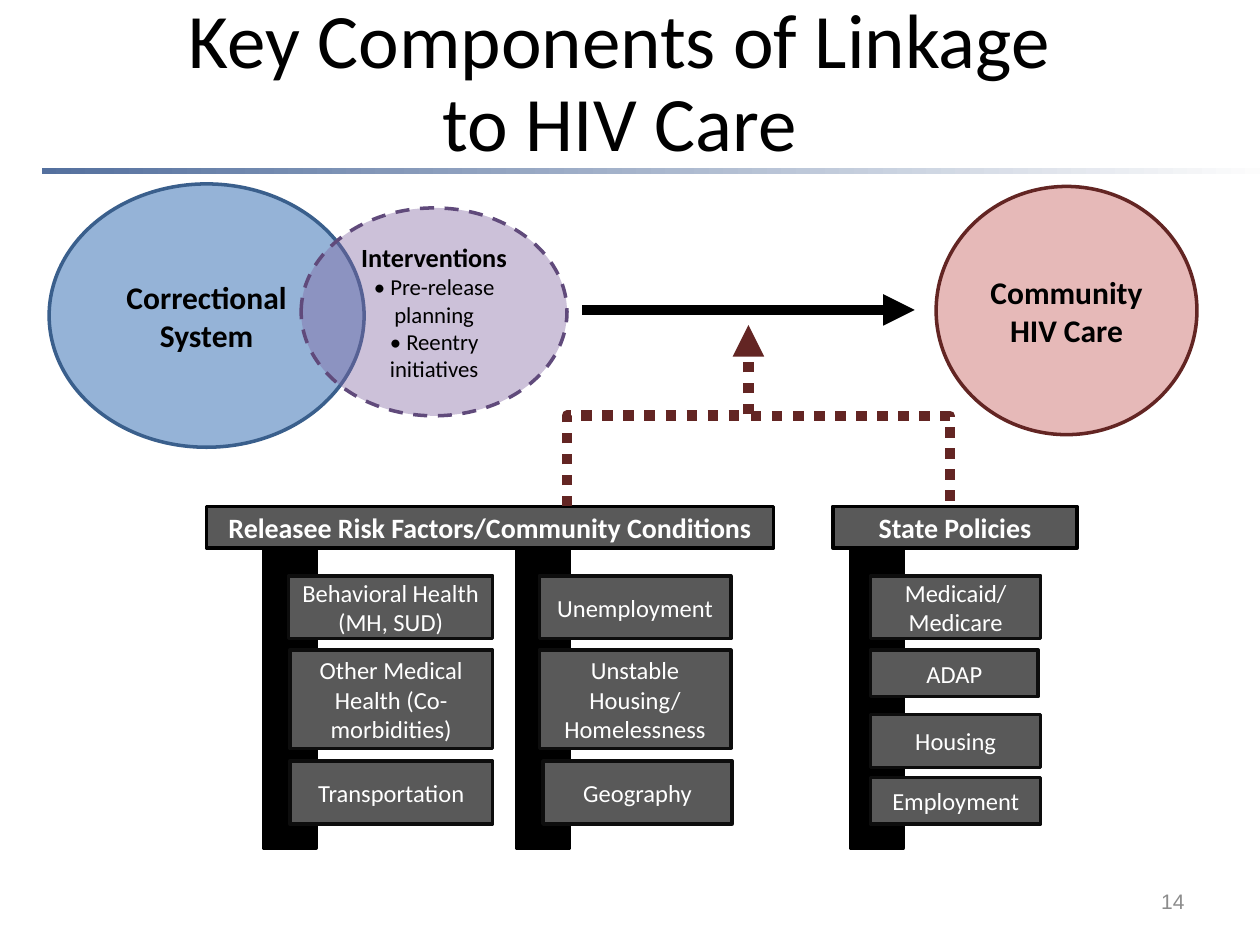
from lxml import etree
from pptx import Presentation
from pptx.dml.color import RGBColor
from pptx.enum.dml import MSO_LINE
from pptx.enum.shapes import MSO_CONNECTOR, MSO_SHAPE
from pptx.enum.text import MSO_ANCHOR, PP_ALIGN
from pptx.oxml.ns import qn
from pptx.util import Inches, Pt

RECT, OVAL = MSO_SHAPE.RECTANGLE, MSO_SHAPE.OVAL
STRAIGHT, ELBOW = MSO_CONNECTOR.STRAIGHT, MSO_CONNECTOR.ELBOW
DASH, DOTS = MSO_LINE.DASH, MSO_LINE.ROUND_DOT
MIDDLE = MSO_ANCHOR.MIDDLE
CENTER, RIGHT = PP_ALIGN.CENTER, PP_ALIGN.RIGHT

COLORS = {
    "black": "000000", "white": "FFFFFF", "gray": "595959", "edge": "0D0D0D",
    "number": "8C8C8C", "rule_start": "54709E", "rule_end": "FCFCFC",
    "blue": "95B3D7", "blue_line": "3A5F8C",
    "purple": "8064A2", "purple_line": "604A7B",
    "pink": "E6B9B8", "maroon": "632523",
}

BAR_TOP, BAR_WIDTH, BAR_HEIGHT = 4.33, 0.42, 2.4
HEADER_TOP, HEADER_HEIGHT = 4.02, 0.33
BARS = [6.75, 4.1, 2.09]
HEADERS = [
    (6.61, 1.94, "State Policies"),
    (1.64, 4.5, "Releasee Risk Factors/Community Conditions"),
]
FACTORS = [
    (6.91, 4.57, 1.35, 0.5, "Medicaid/\nMedicare"),
    (6.91, 5.16, 1.33, 0.37, "ADAP"),
    (6.91, 5.67, 1.35, 0.42, "Housing"),
    (6.91, 6.17, 1.35, 0.37, "Employment"),
    (2.29, 4.57, 1.62, 0.5, "Behavioral Health (MH, SUD)"),
    (2.3, 5.16, 1.61, 0.78, "Other Medical Health (Co-morbidities)"),
    (2.3, 6.04, 1.61, 0.5, "Transportation"),
    (4.28, 4.57, 1.52, 0.5, "Unemployment"),
    (4.28, 5.16, 1.52, 0.78, "Unstable Housing/\nHomelessness"),
    (4.31, 6.04, 1.5, 0.5, "Geography"),
]


def rgb(name):
    return RGBColor.from_string(COLORS[name])


def write(sp, text, size, color="black", bold=False, align=CENTER, font="Calibri"):
    tf = sp.text_frame
    tf.word_wrap = True
    tf.vertical_anchor = MIDDLE
    tf.text = text
    for p in tf.paragraphs:
        p.alignment = align
        for r in p.runs:
            r.font.size = Pt(size)
            r.font.name = font
            r.font.bold = bold
            r.font.color.rgb = rgb(color)


def add_box(slide, kind, at, fill, line):
    sp = slide.shapes.add_shape(kind, *map(Inches, at))
    sp.shadow.inherit = False
    sp.fill.solid()
    sp.fill.fore_color.rgb = rgb(fill)
    sp.line.color.rgb = rgb(line)
    sp.line.width = Pt(2)
    return sp


def add_line(slide, kind, start, end, color, dash=None, arrow=False):
    cx = slide.shapes.add_connector(kind, *map(Inches, start + end))
    cx.line.color.rgb = rgb(color)
    cx.line.width = Pt(6)
    if dash:
        cx.line.dash_style = dash
    props = cx._element.spPr
    if arrow:
        etree.SubElement(props.find(qn("a:ln")), qn("a:tailEnd"), type="triangle")
    etree.SubElement(props, qn("a:effectLst"))
    return cx


def add_title(slide):
    title = slide.shapes.title
    title.left, title.top, title.width, title.height = map(Inches, (0.42, 0.05, 9, 1.25))
    write(title, "Key Components of Linkage\vto HIV Care", 44)
    title.text_frame.paragraphs[0].line_spacing = 0.9


def add_rule(slide):
    sp = slide.shapes.add_shape(RECT, *map(Inches, (0.33, 1.33, 9.67, 0.05)))
    sp.shadow.inherit = False
    sp.line.fill.background()
    sp.fill.gradient()
    sp.fill.gradient_angle = 0
    for stop, name in zip(sp.fill.gradient_stops, ("rule_start", "rule_end")):
        stop.color.rgb = rgb(name)


def add_interventions(slide):
    sp = add_box(slide, OVAL, (2.39, 1.65, 2.11, 1.65), "purple", "purple_line")
    sp.line.dash_style = DASH
    color = sp._element.spPr.find(qn("a:solidFill")).find(qn("a:srgbClr"))
    etree.SubElement(color, qn("a:alpha"), val="40000")
    write(sp, "Interventions\n• Pre-release planning\n• Reentry initiatives", 13)
    heading = sp.text_frame.paragraphs[0].runs[0]
    heading.font.size = Pt(15)
    heading.font.bold = True


def add_systems(slide):
    sp = add_box(slide, OVAL, (0.39, 1.46, 2.5, 2.09), "blue", "blue_line")
    write(sp, "Correctional System", 18, bold=True)
    add_interventions(slide)
    sp = add_box(slide, OVAL, (7.43, 1.48, 2.07, 1.97), "pink", "maroon")
    write(sp, "Community HIV Care", 18, bold=True)


def add_factors(slide):
    for left in BARS:
        add_box(slide, RECT, (left, BAR_TOP, BAR_WIDTH, BAR_HEIGHT), "black", "black")
    for left, width, text in HEADERS:
        sp = add_box(slide, RECT, (left, HEADER_TOP, width, HEADER_HEIGHT), "gray", "black")
        write(sp, text, 16, "white", bold=True)
    for *at, text in FACTORS:
        write(add_box(slide, RECT, at, "gray", "edge"), text, 14, "white")


def add_arrows(slide):
    add_line(slide, STRAIGHT, (4.62, 2.46), (7.26, 2.46), "black", arrow=True)
    riser = add_line(slide, ELBOW, (5.94, 4.02), (4.5, 2.58), "maroon", DOTS, arrow=True)
    riser._element.spPr.find(qn("a:xfrm")).set("rot", "5400000")
    branch = add_line(slide, ELBOW, (5.96, 3.3), (7.54, 4.02), "maroon", DOTS)
    branch._element.spPr.find(qn("a:prstGeom")).set("prst", "bentConnector2")


def add_number(slide):
    sp = slide.shapes.add_textbox(*map(Inches, (7.17, 6.95, 2.33, 0.4)))
    write(sp, "14", 12, "number", align=RIGHT, font="Arial")


def main():
    prs = Presentation()
    prs.slide_width, prs.slide_height = Inches(10), Inches(7.5)
    slide = prs.slides.add_slide(prs.slide_layouts[5])
    add_rule(slide)
    add_title(slide)
    add_systems(slide)
    add_factors(slide)
    add_arrows(slide)
    add_number(slide)
    prs.save("out.pptx")


if __name__ == "__main__":
    main()
